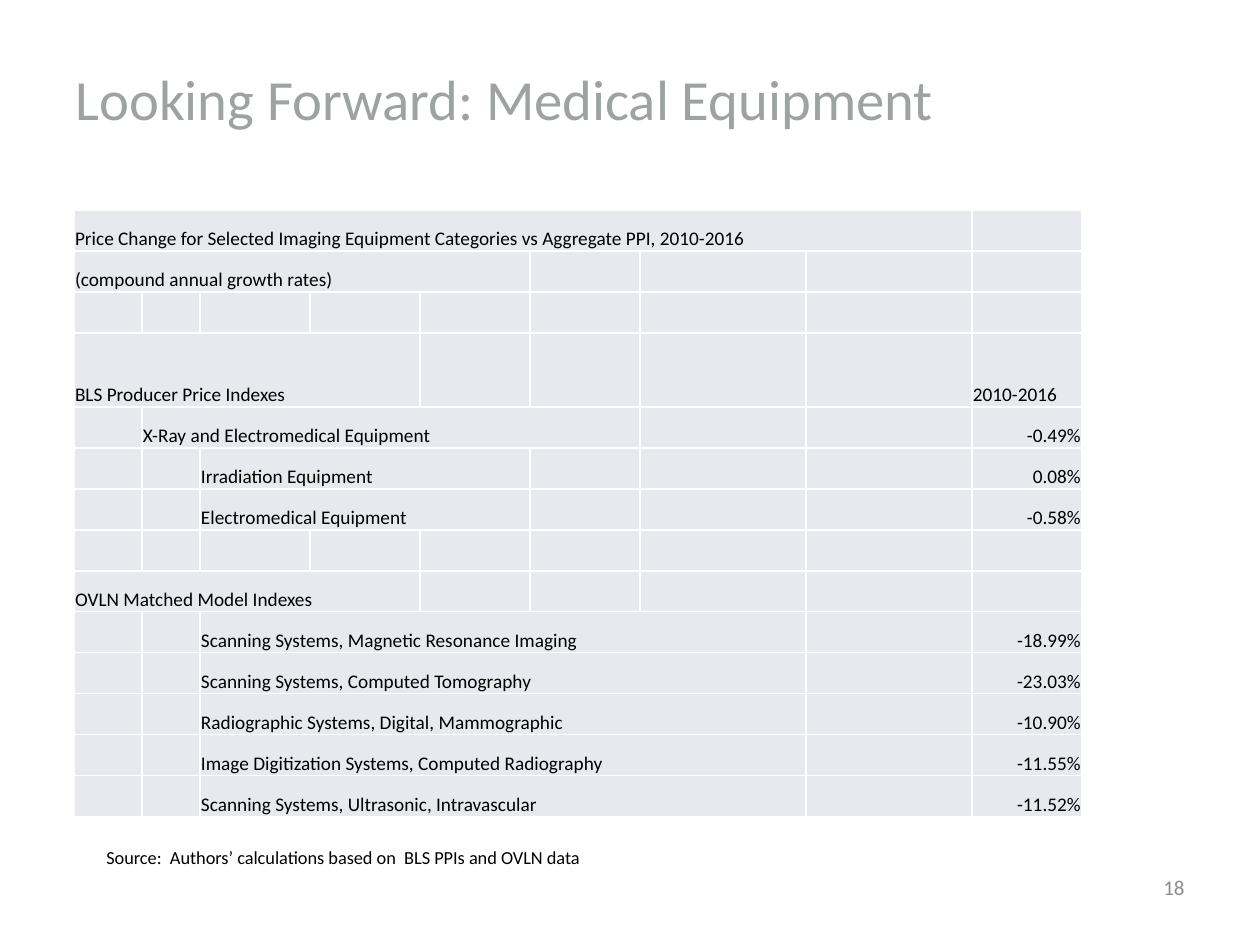
from lxml.etree import SubElement
from pptx import Presentation
from pptx.dml.color import RGBColor
from pptx.enum.text import MSO_ANCHOR, MSO_AUTO_SIZE, PP_ALIGN
from pptx.oxml.ns import qn
from pptx.util import Emu, Pt

PIXELS_PER_INCH = 126
COLUMN_WIDTHS = [68, 58, 110, 110, 110, 110, 166, 166, 110]
ROW_HEIGHT = 41
HEADING_ROW = 3
HEADING_HEIGHT = 74
ROWS = [
    (0, 8, "Price Change for Selected Imaging Equipment Categories vs Aggregate PPI, 2010-2016", ""),
    (0, 5, "(compound annual growth rates)", ""),
    (0, 1, "", ""),
    (0, 4, "BLS Producer Price Indexes", "2010-2016"),
    (1, 5, "X-Ray and Electromedical Equipment", "-0.49%"),
    (2, 3, "Irradiation Equipment", "0.08%"),
    (2, 3, "Electromedical Equipment", "-0.58%"),
    (0, 1, "", ""),
    (0, 4, "OVLN Matched Model Indexes", ""),
    (2, 5, "Scanning Systems, Magnetic Resonance Imaging", "-18.99%"),
    (2, 5, "Scanning Systems, Computed Tomography", "-23.03%"),
    (2, 5, "Radiographic Systems, Digital, Mammographic", "-10.90%"),
    (2, 5, "Image Digitization Systems, Computed Radiography", "-11.55%"),
    (2, 5, "Scanning Systems, Ultrasonic, Intravascular", "-11.52%"),
]


def px(length):
    """Turn pixels into EMU."""
    return Emu(round(length * 914400 / PIXELS_PER_INCH))


def color(value):
    """Turn a hex string into a colour."""
    return RGBColor.from_string(value)


def write(text_frame, text, size, hex_color, align=PP_ALIGN.LEFT):
    """Fill a text frame with one formatted paragraph."""
    paragraph = text_frame.paragraphs[0]
    if text:
        paragraph.add_run().text = text
    paragraph.alignment = align
    paragraph.font.name = "Calibri"
    paragraph.font.size = Pt(size)
    paragraph.font.color.rgb = color(hex_color)


def add_title(slide, text):
    """Place and format the title placeholder."""
    title = slide.shapes.title
    title.left, title.top, title.width, title.height = map(px, (63, 32, 945, 126))
    frame = title.text_frame
    frame.auto_size = MSO_AUTO_SIZE.NONE
    frame.vertical_anchor = MSO_ANCHOR.MIDDLE
    frame.margin_bottom = 0
    write(frame, text, 32.4, "9EA2A2")


def add_text(slide, box, text, size, hex_color, align=PP_ALIGN.LEFT, anchor=MSO_ANCHOR.TOP):
    """Add a wrapped text box."""
    frame = slide.shapes.add_textbox(*map(px, box)).text_frame
    frame.word_wrap = True
    frame.vertical_anchor = anchor
    write(frame, text, size, hex_color, align)


def format_cell(cell):
    """Give a cell its margins, white borders and grey fill."""
    cell.margin_left = cell.margin_right = cell.margin_top = px(1)
    cell.margin_bottom = 0
    cell.vertical_anchor = MSO_ANCHOR.BOTTOM
    properties = cell._tc.get_or_add_tcPr()
    for side in ("a:lnL", "a:lnR", "a:lnT", "a:lnB"):
        line = SubElement(properties, qn(side), w=str(Pt(1)))
        fill = SubElement(line, qn("a:solidFill"))
        SubElement(fill, qn("a:srgbClr"), val="FFFFFF")
    cell.fill.solid()
    cell.fill.fore_color.rgb = color("E7E9EF")


def add_price_table(slide):
    """Add the table of price changes with its merged labels."""
    height = ROW_HEIGHT * (len(ROWS) - 1) + HEADING_HEIGHT
    box = map(px, (74, 210, sum(COLUMN_WIDTHS), height))
    table = slide.shapes.add_table(len(ROWS), len(COLUMN_WIDTHS), *box).table
    table.first_row = table.horz_banding = False
    for column, width in zip(table.columns, COLUMN_WIDTHS):
        column.width = px(width)
    last = len(COLUMN_WIDTHS) - 1
    for index, (start, span, label, value) in enumerate(ROWS):
        table.rows[index].height = px(HEADING_HEIGHT if index == HEADING_ROW else ROW_HEIGHT)
        value_align = PP_ALIGN.RIGHT if value.endswith("%") else PP_ALIGN.LEFT
        texts = {start: (label, PP_ALIGN.LEFT), last: (value, value_align)}
        for position, cell in enumerate(table.rows[index].cells):
            format_cell(cell)
            text, align = texts.get(position, ("", PP_ALIGN.LEFT))
            write(cell.text_frame, text, 11, "000000", align)
        if span > 1:
            table.cell(index, start).merge(table.cell(index, start + span - 1))


def main():
    """Build and save the slide."""
    presentation = Presentation()
    presentation.slide_width, presentation.slide_height = px(1260), px(945)
    slide = presentation.slides.add_slide(presentation.slide_layouts[5])
    add_title(slide, "Looking Forward: Medical Equipment")
    add_text(slide, (1124, 873, 73, 28), "18", 12, "8C8C8C", PP_ALIGN.RIGHT, MSO_ANCHOR.MIDDLE)
    add_price_table(slide)
    source = "Source:  Authors’ calculations based on  BLS PPIs and OVLN data"
    add_text(slide, (94, 840, 819, 35), source, 10.5, "000000")
    presentation.save("out.pptx")


if __name__ == "__main__":
    main()
